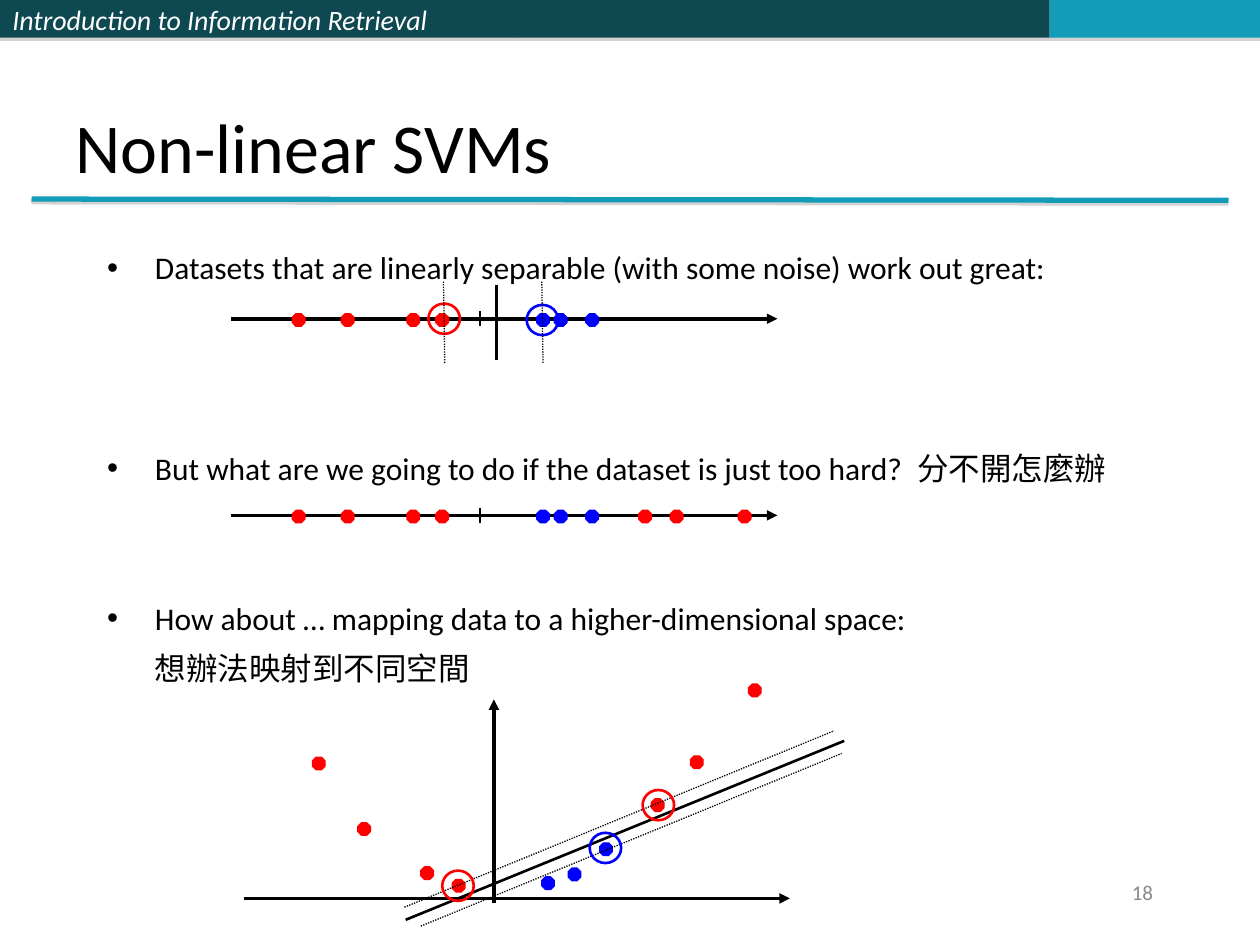
"""Build the slide on non-linear SVMs on a grid of 100 columns by 75 rows."""
import pptx
import pptx.dml.color
import pptx.enum.dml
import pptx.enum.shapes
import pptx.enum.text
import pptx.oxml.ns
import pptx.util
from lxml import etree

BLACK = pptx.dml.color.RGBColor(0, 0, 0)
WHITE = pptx.dml.color.RGBColor(255, 255, 255)
RED = pptx.dml.color.RGBColor(255, 0, 0)
BLUE = pptx.dml.color.RGBColor(0, 0, 255)
GREY = pptx.dml.color.RGBColor(0x89, 0x89, 0x89)
PETROL = pptx.dml.color.RGBColor(0x0E, 0x48, 0x51)
TEAL = pptx.dml.color.RGBColor(0x13, 0x9C, 0xB7)
SHADOW = pptx.dml.color.RGBColor(0x80, 0x80, 0x80)

CELL = pptx.util.Inches(0.1)
KINDS = pptx.enum.shapes.MSO_SHAPE
ALIGN = pptx.enum.text.PP_ALIGN
ANCHOR = pptx.enum.text.MSO_ANCHOR

RED_COLUMNS = [23.2, 27.1, 32.3, 34.6]
BLUE_COLUMNS = [42.6, 44, 46.5]
FAR_RED_COLUMNS = [50.7, 53.2, 58.6]
MAPPED_RED = [(24.8, 60.1), (28.4, 65.3), (33.4, 68.8), (35.9, 69.8),
              (51.7, 63.4), (54.8, 60), (59.4, 54.3)]
MAPPED_BLUE = [(43, 69.6), (45.1, 68.9), (47.6, 66.9)]
BULLETS = [
    ("Datasets that are linearly separable (with some noise) work out great:", 7, True),
    ("But what are we going to do if the dataset is just too hard?  分不開怎麼辦", 93, True),
    ("How about … mapping data to a higher-dimensional space:", 64, True),
    ("想辦法映射到不同空間", 7, False),
]


def cells(*counts):
    """Turn counts of grid cells into lengths."""
    return [round(count * CELL) for count in counts]


def add_node(parent, tag, **attributes):
    """Append a drawing element to its parent."""
    node = etree.SubElement(parent, pptx.oxml.ns.qn(tag))
    for name, value in attributes.items():
        node.set(name, str(value))
    return node


def set_shadow(shape, points):
    """Cast a soft grey shadow straight down, or none at zero points."""
    effects = add_node(shape._element.spPr, "a:effectLst")
    if points:
        shadow = add_node(effects, "a:outerShdw", blurRad=0,
                          dist=pptx.util.Pt(points), dir=5400000, rotWithShape=0)
        color = add_node(shadow, "a:srgbClr", val=SHADOW)
        add_node(color, "a:alpha", val=35000)


def write(para, text, size=18, color=BLACK, italic=False, align=ALIGN.LEFT, before=0):
    """Write text into a paragraph with its format."""
    para.alignment = align
    para.space_before = pptx.util.Pt(before)
    span = para.add_run()
    span.text = text
    span.font.name = "Calibri"
    span.font.size = pptx.util.Pt(size)
    span.font.italic = italic
    span.font.color.rgb = color


def prepare_frame(shape, anchor):
    """Set wrapping, anchor and fixed size of a text frame."""
    frame = shape.text_frame
    frame.word_wrap = True
    frame.auto_size = pptx.enum.text.MSO_AUTO_SIZE.NONE
    frame.vertical_anchor = anchor
    return frame


def place(shape, *spot):
    """Move and size a placeholder on the grid."""
    shape.left, shape.top, shape.width, shape.height = cells(*spot)


def add_shape(page, kind, spot, fill=None, outline=None, width=0.75, shadow=0):
    """Add a preset shape with optional fill, outline and shadow."""
    shape = page.shapes.add_shape(kind, *cells(*spot))
    if fill is None:
        shape.fill.background()
    else:
        shape.fill.solid()
        shape.fill.fore_color.rgb = fill
    if outline is None:
        shape.line.fill.background()
    else:
        shape.line.color.rgb = outline
        shape.line.width = pptx.util.Pt(width)
    set_shadow(shape, shadow)
    return shape


def add_line(page, start, end, width=0.75, color=BLACK, arrow=False, dotted=False, shadow=0):
    """Add a straight line, plain, dotted or with an arrowhead at its end."""
    line = page.shapes.add_connector(
        pptx.enum.shapes.MSO_CONNECTOR.STRAIGHT, *cells(*start, *end))
    line.line.color.rgb = color
    line.line.width = pptx.util.Pt(width)
    if dotted:
        line.line.dash_style = pptx.enum.dml.MSO_LINE.ROUND_DOT
    if arrow:
        stroke = line._element.spPr.find(pptx.oxml.ns.qn("a:ln"))
        add_node(stroke, "a:tailEnd", type="triangle")
    set_shadow(line, shadow)


def add_dots(page, spots, color):
    """Add one data point at each spot."""
    for column, row in spots:
        add_shape(page, KINDS.OCTAGON, (column, row, 1, 1), color, color)


def add_ring(page, column, row, color):
    """Circle a support vector."""
    add_shape(page, KINDS.OVAL, (column, row, 2.5, 2.4), outline=color, width=1.5)


def add_number_line(page, row, red_columns):
    """Add a horizontal axis with its tick and data points."""
    add_line(page, (18.3, row), (61.7, row), width=2, arrow=True)
    add_line(page, (38.1, row - 0.6), (38.1, row + 0.6))
    add_dots(page, [(column, row - 0.4) for column in red_columns], RED)
    add_dots(page, [(column, row - 0.4) for column in BLUE_COLUMNS], BLUE)


def add_separable_plot(page):
    """Add the number line that one threshold splits."""
    add_number_line(page, 25.3, RED_COLUMNS)
    add_line(page, (39.4, 22.6), (39.4, 28.6), width=1.5)
    for column, ring_row, color in [(43, 24.2, BLUE), (35.2, 24.1, RED)]:
        add_ring(page, column - 1.2, ring_row, color)
        add_line(page, (column + 0.1, 28.8), (column, 22.3), dotted=True)


def add_mapped_plot(page):
    """Add the plane where a slanted line splits the mapped points."""
    add_line(page, (19.4, 71.3), (62.7, 71.3), width=2, arrow=True)
    add_line(page, (39.2, 71.7), (39.2, 55.5), width=2, arrow=True)
    add_dots(page, MAPPED_RED, RED)
    add_dots(page, MAPPED_BLUE, BLUE)
    add_line(page, (32.2, 73), (67, 58.8), width=1.5)
    add_line(page, (32.1, 72), (66.2, 58), dotted=True)
    add_line(page, (33.4, 73.5), (66.8, 59.8), dotted=True)
    for column, row, color in [(51, 62.7, RED), (46.8, 66.1, BLUE), (35.1, 69.1, RED)]:
        add_ring(page, column, row, color)


def add_frame(page):
    """Add the header band, the title rule and the page number."""
    label = add_shape(page, KINDS.RECTANGLE, (0, 0, 40.8, 3), PETROL, shadow=1.8)
    write(prepare_frame(label, ANCHOR.MIDDLE).paragraphs[0],
          "Introduction to Information Retrieval", size=16, color=WHITE, italic=True)
    add_shape(page, KINDS.RECTANGLE, (40.8, 0, 42.5, 3), PETROL, shadow=1.8)
    add_shape(page, KINDS.RECTANGLE, (83.3, 0, 16.7, 3), TEAL, shadow=1.8)
    add_line(page, (2.5, 15.8), (97.5, 15.9), width=3, color=TEAL, shadow=1.6)
    number = page.shapes.add_textbox(*cells(71.7, 68.3, 20.8, 5))
    write(prepare_frame(number, ANCHOR.MIDDLE).paragraphs[0],
          "18", size=12, color=GREY, align=ALIGN.RIGHT)


def fill_placeholders(page):
    """Write the title and the bullet list."""
    title, body = page.placeholders
    place(title, 5, 1.1, 89.9, 14.3)
    write(prepare_frame(title, ANCHOR.BOTTOM).paragraphs[0], "Non-linear SVMs", size=40)
    place(body, 7.5, 19.2, 90, 53.3)
    frame = prepare_frame(body, ANCHOR.TOP)
    for index, (text, before, bulleted) in enumerate(BULLETS):
        para = frame.add_paragraph() if index else frame.paragraphs[0]
        write(para, text, before=before)
        indent = pptx.util.Inches(0.38)
        layout = para._p.get_or_add_pPr()
        layout.set("marL", str(indent))
        layout.set("indent", str(-indent if bulleted else 0))
        if bulleted:
            add_node(layout, "a:buChar", char="•")
        else:
            add_node(layout, "a:buNone")


def main():
    """Build and save the deck."""
    deck = pptx.Presentation()
    deck.slide_width, deck.slide_height = cells(100, 75)
    page = deck.slides.add_slide(deck.slide_layouts[1])
    add_frame(page)
    fill_placeholders(page)
    add_mapped_plot(page)
    add_number_line(page, 40.9, RED_COLUMNS + FAR_RED_COLUMNS)
    add_separable_plot(page)
    deck.save("out.pptx")


if __name__ == "__main__":
    main()
